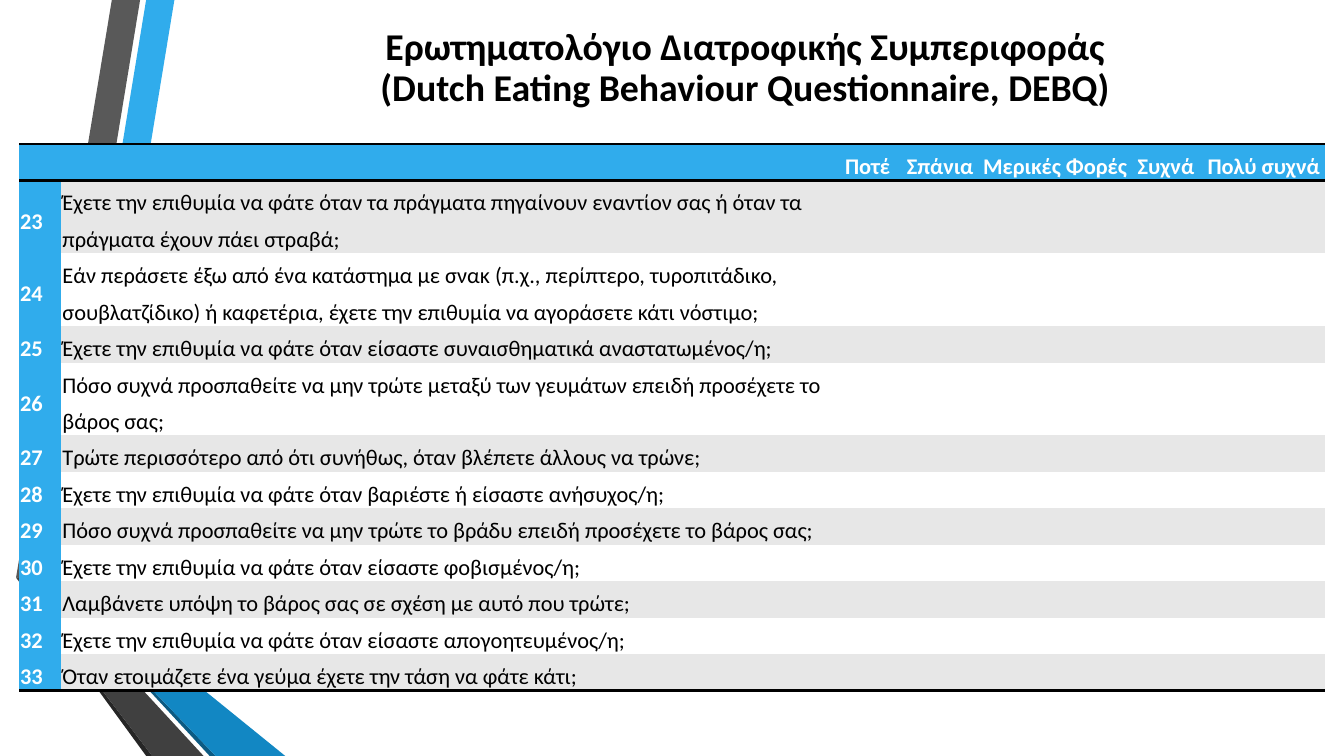
from dataclasses import dataclass

from lxml.etree import SubElement
from pptx import Presentation
from pptx.dml.color import RGBColor as RGB
from pptx.enum.text import MSO_ANCHOR as Anchor, PP_ALIGN as Align
from pptx.oxml.ns import qn
from pptx.util import Inches, Pt

# Content
TITLE = ["Ερωτηματολόγιο Διατροφικής Συμπεριφοράς",
         "(Dutch Eating Behaviour Questionnaire, DEBQ)"]
ANSWERS = ["Ποτέ", "Σπάνια", "Μερικές Φορές", "Συχνά", "Πολύ συχνά"]
FIRST_NUMBER = 23
QUESTIONS = [  # text, number of lines
    ("Έχετε την επιθυμία να φάτε όταν τα πράγματα πηγαίνουν εναντίον σας ή όταν τα πράγματα έχουν πάει στραβά;", 2),
    ("Εάν περάσετε έξω από ένα κατάστημα με σνακ (π.χ., περίπτερο, τυροπιτάδικο, σουβλατζίδικο) ή καφετέρια, "
     "έχετε την επιθυμία να αγοράσετε κάτι νόστιμο;", 2),
    ("Έχετε την επιθυμία να φάτε όταν είσαστε συναισθηματικά αναστατωμένος/η;", 1),
    ("Πόσο συχνά προσπαθείτε να μην τρώτε μεταξύ των γευμάτων επειδή προσέχετε το βάρος σας;", 2),
    ("Τρώτε περισσότερο από ότι συνήθως, όταν βλέπετε άλλους να τρώνε;", 1),
    ("Έχετε την επιθυμία να φάτε όταν βαριέστε ή είσαστε ανήσυχος/η;", 1),
    ("Πόσο συχνά προσπαθείτε να μην τρώτε το βράδυ επειδή προσέχετε το βάρος σας;", 1),
    ("Έχετε την επιθυμία να φάτε όταν είσαστε φοβισμένος/η;", 1),
    ("Λαμβάνετε υπόψη το βάρος σας σε σχέση με αυτό που τρώτε;", 1),
    ("Έχετε την επιθυμία να φάτε όταν είσαστε απογοητευμένος/η;", 1),
    ("Όταν ετοιμάζετε ένα γεύμα έχετε την τάση να φάτε κάτι;", 1),
]
COLUMN_WIDTHS = [0.42, 7.68, 0.63, 0.81, 1.47, 0.73, 1.21]
LINE_HEIGHT = 0.36
NO_STYLE = "{2D5ABB26-0587-4C30-8999-92F81FD0307C}"

RIBBONS = [  # colour, outline
    ("30ACEC", [(0.5, 5.78), (0.77, 5.83), (1.73, 0), (1.45, 0)]),
    ("595959", [(1.39, 0), (1.11, 0), (0.16, 5.73), (0.44, 5.77)]),
    ("262626", [(0.16, 5.73), (1.45, 7.5), (1.51, 7.5)]),
    ("0C5A82", [(0.5, 5.79), (2.08, 7.5), (2.14, 7.5)]),
    ("1287C3", [(0.5, 5.79), (2.14, 7.5), (2.83, 7.5), (0.77, 5.83), (0.5, 5.78)]),
    ("404040", [(2.02, 7.5), (0.48, 5.83), (0.43, 5.78), (0.44, 5.77), (0.16, 5.73), (1.51, 7.5)]),
]


@dataclass(frozen=True)
class Theme:
    font: str = "Calibri"
    title_size: int = 27
    table_size: int = 16
    line_spacing: int = 26
    rule_width: int = 2
    accent: str = "30ACEC"
    band: str = "E7E7E7"
    white: str = "FFFFFF"
    black: str = "000000"


theme = Theme()


def add_span(para, text, size, color, bold):
    span = para.add_run()
    span.text = text
    span.font.name = theme.font
    span.font.size = Pt(size)
    span.font.bold = bold
    span.font.color.rgb = RGB.from_string(color)


def add_ribbon(page, color, points):
    corners = [(Inches(x), Inches(y)) for x, y in points]
    builder = page.shapes.build_freeform(*corners[0])
    builder.add_line_segments(corners[1:], close=True)
    ribbon = builder.convert_to_shape()
    ribbon.shadow.inherit = False
    ribbon.fill.solid()
    ribbon.fill.fore_color.rgb = RGB.from_string(color)
    ribbon.line.fill.background()


def add_rule(cell, side):
    rule = SubElement(cell._tc.get_or_add_tcPr(), qn(f"a:ln{side}"), w=str(Pt(theme.rule_width)))
    fill = SubElement(rule, qn("a:solidFill"))
    SubElement(fill, qn("a:srgbClr"), val=theme.black)


def format_cell(cell, fill, rules, text, color, bold, align):
    for side in rules:  # rules come before the fill in the cell properties
        add_rule(cell, side)
    cell.fill.solid()
    cell.fill.fore_color.rgb = RGB.from_string(fill)
    cell.margin_left = cell.margin_right = Inches(0.01)
    cell.margin_top = cell.margin_bottom = 0
    cell.vertical_anchor = Anchor.MIDDLE
    para = cell.text_frame.paragraphs[0]
    para.line_spacing = Pt(theme.line_spacing)
    para.alignment = align
    if text:
        add_span(para, text, theme.table_size, color, bold)


deck = Presentation()
deck.slide_width, deck.slide_height = Inches(13.33), Inches(7.5)
page = deck.slides.add_slide(deck.slide_layouts[5])

# Ribbons on the left
for color, points in RIBBONS:
    add_ribbon(page, color, points)

# Title
title = page.shapes.title
title.left, title.top, title.width, title.height = map(Inches, (1.91, 0.16, 10.96, 0.98))
title.text_frame.word_wrap = True
title.text_frame.vertical_anchor = Anchor.BOTTOM
para = title.text_frame.paragraphs[0]
para.alignment = Align.CENTER
para.line_spacing = 0.9
for index, line in enumerate(TITLE):
    if index:
        para.add_line_break()
    add_span(para, line, theme.title_size, theme.black, True)

# Questionnaire table
rows = [["", ""] + ANSWERS]
rows += [[str(number), question] + [""] * len(ANSWERS)
         for number, (question, _) in enumerate(QUESTIONS, FIRST_NUMBER)]
heights = [LINE_HEIGHT] + [LINE_HEIGHT * lines for _, lines in QUESTIONS]
frame = page.shapes.add_table(len(rows), len(COLUMN_WIDTHS), Inches(0.19), Inches(1.43),
                              Inches(sum(COLUMN_WIDTHS)), Inches(sum(heights)))
table = frame.table
table._tbl.tblPr.find(qn("a:tableStyleId")).text = NO_STYLE
for column, width in zip(table.columns, COLUMN_WIDTHS):
    column.width = Inches(width)
for r, (texts, height) in enumerate(zip(rows, heights)):
    table.rows[r].height = Inches(height)
    rules = "TB" if r == 0 else "B" if r == len(rows) - 1 else ""
    for c, text in enumerate(texts):
        heading = r == 0 or c == 0
        band = theme.band if r % 2 else theme.white
        format_cell(table.cell(r, c), theme.accent if heading else band, rules, text,
                    theme.white if heading else theme.black, heading,
                    Align.CENTER if r == 0 else Align.LEFT)

deck.save("out.pptx")
